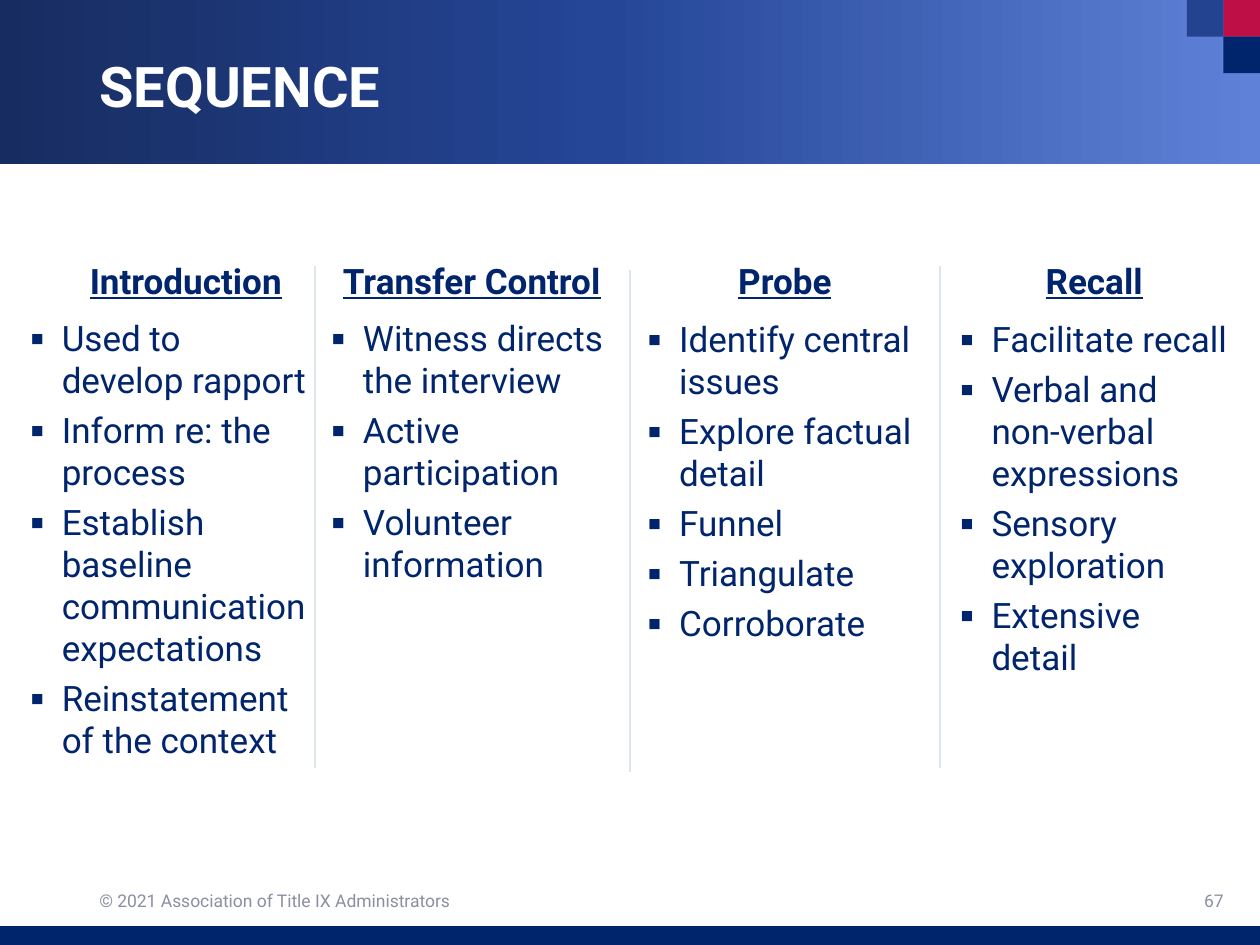
from copy import deepcopy

from lxml.etree import SubElement
from pptx import Presentation
from pptx.dml.color import RGBColor
from pptx.enum.shapes import MSO_CONNECTOR, MSO_SHAPE
from pptx.enum.text import MSO_ANCHOR, MSO_AUTO_SIZE, PP_ALIGN
from pptx.oxml.ns import qn
from pptx.util import Pt

NAVY = RGBColor(0x00, 0x25, 0x6D)
BLUE = RGBColor(0x23, 0x42, 0x8F)
RED = RGBColor(0xBE, 0x10, 0x47)
WHITE = RGBColor(0xFF, 0xFF, 0xFF)
GREY = RGBColor(0x8C, 0x8E, 0xA3)
DIVIDER = RGBColor(0xDF, 0xE6, 0xEB)
BAND = [(0, RGBColor(0x17, 0x2C, 0x60)),
        (0.48, RGBColor(0x25, 0x46, 0x97)),
        (1, RGBColor(0x5F, 0x82, 0xD8))]

WIDTH, HEIGHT = 720, 540
SQUARE = 20.88
COMPARISON_LAYOUT = 4

# heading, heading left and width, list left, top and width, items
COLUMNS = [
    ("Introduction", 33.1, 146.2, 17.3, 180.7, 158.4,
     ["Used to develop rapport", "Inform re: the process",
      "Establish baseline communication expectations",
      "Reinstatement of the context"]),
    ("Transfer Control", 191.5, 156.2, 189.4, 180.7, 160.6,
     ["Witness directs the interview", "Active participation",
      "Volunteer information"]),
    ("Probe", 372.2, 152.6, 370.1, 181.4, 169.9,
     ["Identify central issues", "Explore factual detail", "Funnel",
      "Triangulate", "Corroborate"]),
    ("Recall", 552.2, 146.2, 548.6, 181.4, 154.1,
     ["Facilitate recall", "Verbal and non-verbal expressions",
      "Sensory exploration", "Extensive detail"]),
]
DIVIDERS = [(180, 151.9), (360, 154.1), (537.1, 151.9)]


class SlideBuilder:
    """Holds the text style and the slide being drawn."""

    font_name = "Roboto"
    body_size = 20
    item_gap = 4.5
    bullet_indent = 18

    def __init__(self, slide):
        self.slide = slide
        self.shapes = slide.shapes

    def style(self, paragraph, size, color, bold=False, underline=False):
        font = paragraph.font
        font.name = self.font_name
        font.size = Pt(size)
        font.color.rgb = color
        font.bold = bold
        font.underline = underline

    def place(self, shape, left, top, width, height):
        shape.left, shape.top = Pt(left), Pt(top)
        shape.width, shape.height = Pt(width), Pt(height)

    def frame(self, shape, anchor, margin=None):
        """Prepare the text frame of a shape and return it."""
        frame = shape.text_frame
        frame.word_wrap = True
        frame.auto_size = MSO_AUTO_SIZE.NONE
        frame.vertical_anchor = anchor
        if margin is not None:
            frame.margin_left = frame.margin_right = Pt(margin)
            frame.margin_top = frame.margin_bottom = Pt(margin)
        return frame

    def rectangle(self, left, top, width, height, color=None):
        shape = self.shapes.add_shape(
            MSO_SHAPE.RECTANGLE, Pt(left), Pt(top), Pt(width), Pt(height))
        shape.shadow.inherit = False
        shape.line.fill.background()
        if color is not None:
            shape.fill.solid()
            shape.fill.fore_color.rgb = color
        return shape

    def gradient_band(self, height, stops):
        fill = self.rectangle(0, 0, WIDTH, height).fill
        fill.gradient()
        fill.gradient_angle = 0
        stop_list = fill._fill._gradFill.gsLst
        while len(stop_list) < len(stops):
            stop_list.append(deepcopy(stop_list[0]))
        for stop, (position, color) in zip(fill.gradient_stops, stops):
            stop.position = position
            stop.color.rgb = color

    def title(self, text, left, top, width, height):
        shape = self.shapes.title
        self.shapes._spTree.append(shape._element)  # in front of the band
        self.place(shape, left, top, width, height)
        frame = self.frame(shape, MSO_ANCHOR.MIDDLE)
        frame.text = text
        paragraph = frame.paragraphs[0]
        paragraph.alignment = PP_ALIGN.LEFT
        paragraph.line_spacing = 0.9
        self.style(paragraph, 32, WHITE, bold=True)

    def text(self, text, left, top, width, height, anchor=MSO_ANCHOR.MIDDLE,
             align=PP_ALIGN.LEFT, margin=None):
        """Add a one-line text box and return its paragraph for styling."""
        shape = self.shapes.add_textbox(Pt(left), Pt(top), Pt(width), Pt(height))
        frame = self.frame(shape, anchor, margin)
        frame.text = text
        paragraph = frame.paragraphs[0]
        paragraph.alignment = align
        return paragraph

    def footer(self, text, left, width, align):
        paragraph = self.text(text, left, 500.4, width, 28.8, align=align)
        self.style(paragraph, 10, GREY)

    def heading(self, text, left, width):
        paragraph = self.text(text, left, 136.1, width, 36,
                              MSO_ANCHOR.BOTTOM, PP_ALIGN.CENTER, margin=0)
        paragraph.line_spacing = 0.8
        self.style(paragraph, self.body_size, NAVY, bold=True, underline=True)

    def bullet(self, paragraph):
        properties = paragraph._p.get_or_add_pPr()
        properties.set("marL", str(Pt(self.bullet_indent)))
        properties.set("indent", str(-Pt(self.bullet_indent)))
        color = SubElement(properties, qn("a:buClr"))
        SubElement(color, qn("a:srgbClr"), val=str(NAVY))
        SubElement(properties, qn("a:buFont"), typeface=self.font_name)
        SubElement(properties, qn("a:buChar"), char="▪")

    def bullet_list(self, placeholder_index, items, left, top, width):
        shape = self.slide.placeholders[placeholder_index]
        self.place(shape, left, top, width, 290.9)
        frame = self.frame(shape, MSO_ANCHOR.TOP, margin=0)
        frame.text = "\n".join(items)
        for index, paragraph in enumerate(frame.paragraphs):
            self.bullet(paragraph)
            paragraph.space_before = Pt(self.item_gap if index else 0)
            self.style(paragraph, self.body_size, NAVY)

    def divider(self, left, top, height=287):
        line = self.shapes.add_connector(
            MSO_CONNECTOR.STRAIGHT, Pt(left), Pt(top), Pt(left), Pt(top + height))
        line.line.color.rgb = DIVIDER
        line.line.width = Pt(1)
        SubElement(line._element.spPr, qn("a:effectLst"))


def main():
    presentation = Presentation()
    presentation.slide_width, presentation.slide_height = Pt(WIDTH), Pt(HEIGHT)
    layout = presentation.slide_layouts[COMPARISON_LAYOUT]
    builder = SlideBuilder(presentation.slides.add_slide(layout))

    builder.gradient_band(93.6, BAND)
    builder.footer("© 2021 Association of Title IX Administrators",
                   49.7, 243.4, PP_ALIGN.LEFT)
    for column, row, color in [(1, 0, RED), (2, 0, BLUE), (1, 1, NAVY)]:
        builder.rectangle(WIDTH - column * SQUARE, row * SQUARE,
                          SQUARE, SQUARE, color)
    builder.rectangle(0, 529.2, WIDTH, 10.8, NAVY)
    builder.title("SEQUENCE", 49.7, 21.6, 620.6, 59)
    builder.footer("67", 544.3, 162, PP_ALIGN.RIGHT)

    for number, column in enumerate(COLUMNS, start=1):
        heading, heading_left, heading_width, left, top, width, items = column
        builder.heading(heading, heading_left, heading_width)
        builder.bullet_list(number, items, left, top, width)
    for left, top in DIVIDERS:
        builder.divider(left, top)

    presentation.save("out.pptx")


if __name__ == "__main__":
    main()
